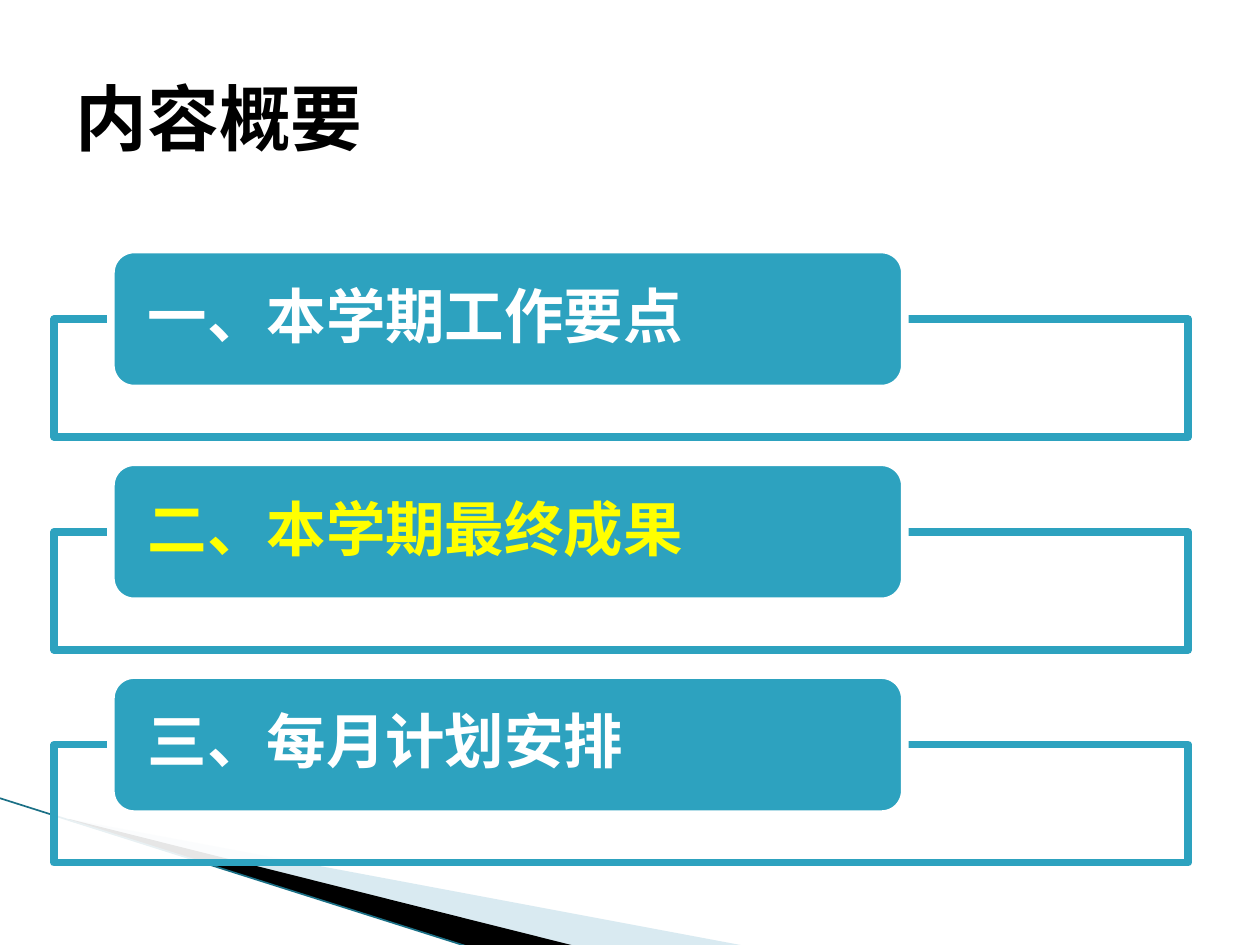
from pptx import Presentation
from pptx import util as u
from pptx.dml.color import RGBColor
from pptx.enum import shapes, text
from pptx.oxml.ns import qn
from lxml import etree

Pt = u.Pt
FONT = "Noto Sans Mono"
TEAL, WHITE, BLACK, YELLOW = "2DA2BF", "FFFFFF", "000000", "FFFF00"


def tint(fmt, color, alpha=None):
    """Give a fill a solid colour, with opacity in percent."""
    fmt.solid()
    fmt.fore_color.rgb = RGBColor.from_string(color)
    if alpha is not None:
        clr = fmt._xPr.find(qn("a:solidFill"))[0]
        etree.SubElement(clr, qn("a:alpha"), val=str(alpha * 1000))


def style(shape, fill, alpha=None, line=None, width=4.33):
    shape.shadow.inherit = False
    tint(shape.fill, fill, alpha)
    if line:
        tint(shape.line.fill, line)
        shape.line.width = Pt(width)
    else:
        shape.line.fill.background()


def write(frame, words, size=34, color=WHITE, side=7.2, edge=3.6,
          lines=None, after=None):
    """Write one left-aligned bold paragraph, centred in height."""
    frame.word_wrap = True
    frame.auto_size = text.MSO_AUTO_SIZE.NONE
    frame.vertical_anchor = text.MSO_ANCHOR.MIDDLE
    frame.margin_left = frame.margin_right = Pt(side)
    frame.margin_top = frame.margin_bottom = Pt(edge)
    para = frame.paragraphs[0]
    para.alignment = text.PP_ALIGN.LEFT
    if lines:
        para.line_spacing = lines
    if after:
        para.space_after = Pt(after)
    run = para.add_run()
    run.text = words
    font = run.font
    font.name, font.size, font.bold = FONT, Pt(size), True
    tint(font.fill, color)
    etree.SubElement(font._element, qn("a:ea"), typeface=FONT)


def title(slide, words, x, y, w, h):
    head = slide.shapes.title
    head.left, head.top, head.width, head.height = map(Pt, (x, y, w, h))
    write(head.text_frame, words, size=41, color=BLACK)


def swoosh(slide, x, y):
    """Corner wedges and edge line fanning out from the point x, y."""
    wedges = [
        ([(389, 73), (289, 73), (0, 1)], "A0CBDC", 40),
        ([(291, 73), (229, 73), (0, 1)], BLACK, None),
    ]
    for ends, color, alpha in wedges:
        path = slide.shapes.build_freeform(Pt(x), Pt(y))
        path.add_line_segments([(Pt(x + a), Pt(y + b)) for a, b in ends])
        style(path.convert_to_shape(), color, alpha)
    edge = slide.shapes.add_connector(
        shapes.MSO_CONNECTOR.STRAIGHT,
        Pt(x - 40), Pt(y - 12), Pt(x + 228), Pt(y + 73))
    tint(edge.line.fill, "1B7086")
    edge.line.width = Pt(0.95)
    etree.SubElement(edge._element.spPr, qn("a:effectLst"))


def agenda(slide, items, x, y, w, step):
    """Stack of framed rows, each with a rounded label on its top edge."""
    tab = 79.4
    for i, (words, color) in enumerate(items):
        top = y + i * step
        frame = slide.shapes.add_shape(
            shapes.MSO_SHAPE.RECTANGLE,
            Pt(x), Pt(top + tab / 2), Pt(w), Pt(67.5))
        style(frame, WHITE, 90, TEAL)
        label = slide.shapes.add_shape(
            shapes.MSO_SHAPE.ROUNDED_RECTANGLE,
            Pt(x + w * 0.05), Pt(top), Pt(w * 0.7), Pt(tab))
        style(label, TEAL, line=WHITE)
        write(label.text_frame, words, color=color, side=17.2, edge=0,
              lines=0.9, after=12)


def main():
    deck = Presentation()
    deck.slide_width, deck.slide_height = Pt(720), Pt(540)
    slide = deck.slides.add_slide(deck.slide_layouts[5])
    swoosh(slide, 39.5, 468)
    agenda(slide, [
        ("一、本学期工作要点", WHITE),
        ("二、本学期最终成果", YELLOW),
        ("三、每月计划安排", WHITE),
    ], x=31, y=142.6, w=648, step=121.6)
    title(slide, "内容概要", 36, 21.6, 648, 90)
    deck.save("out.pptx")


if __name__ == "__main__":
    main()
